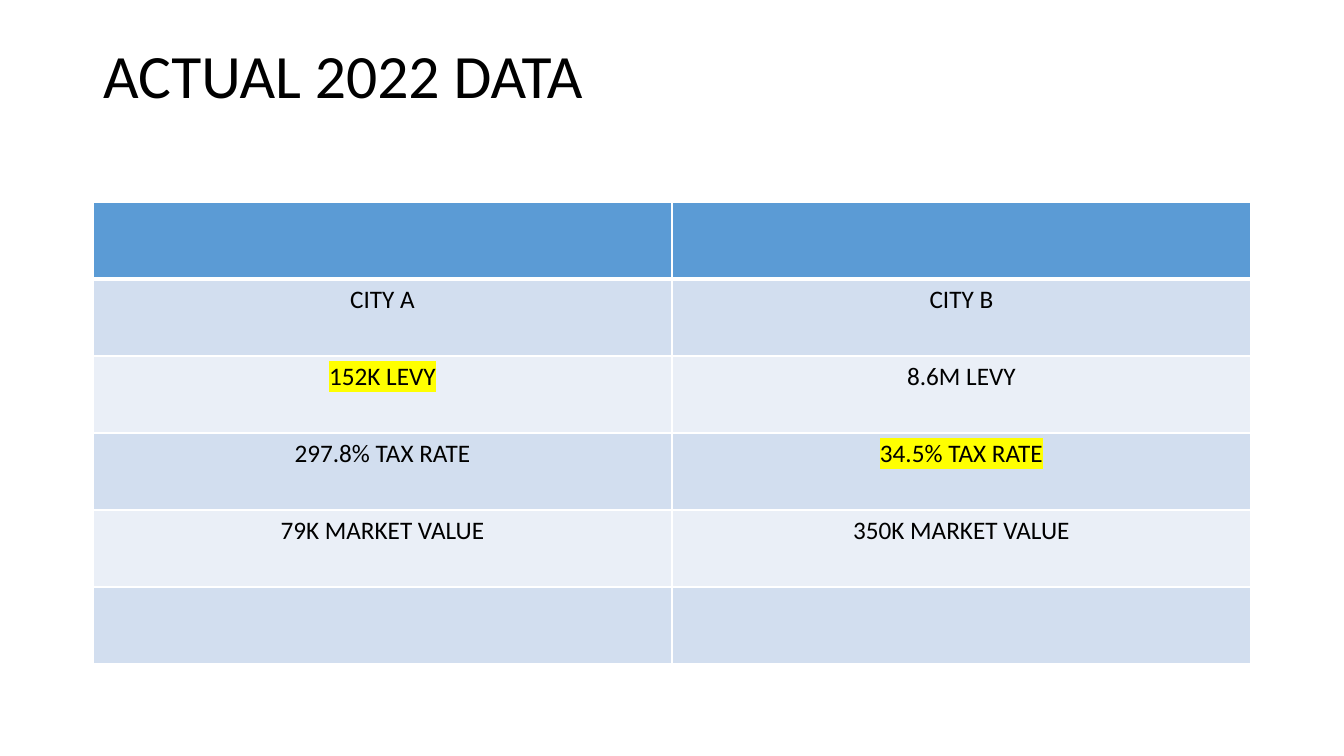
from lxml.etree import SubElement
from pptx import Presentation
from pptx.dml.color import RGBColor
from pptx.enum.text import MSO_ANCHOR, PP_ALIGN
from pptx.oxml import parse_xml
from pptx.oxml.ns import nsdecls, qn
from pptx.util import Emu, Pt


def px(n):
    """Turn pixels, 100.8 to the inch, into EMU."""
    return Emu(round(n * 914400 / 100.8))


def style(run, size):
    run.font.name = "Calibri"
    run.font.size = Pt(size)
    run.font.color.rgb = RGBColor.from_string("000000")


deck = Presentation()
deck.slide_width, deck.slide_height = px(1344), px(756)
slide = deck.slides.add_slide(deck.slide_layouts[5])

title = slide.shapes.title
title.left, title.top, title.width, title.height = px(93), px(40), px(1158), px(146)
frame = title.text_frame
frame.word_wrap = True
frame.vertical_anchor = MSO_ANCHOR.TOP
para = frame.paragraphs[0]
para.alignment = PP_ALIGN.LEFT
para.line_spacing = 0.9
run = para.add_run()
run.text = "ACTUAL 2022 DATA"
style(run, 44)

rows = [
    ("", ""),
    ("CITY A", "CITY B"),
    ("152K LEVY", "8.6M LEVY"),
    ("297.8% TAX RATE", "34.5% TAX RATE"),
    ("79K MARKET VALUE", "350K MARKET VALUE"),
    ("", ""),
]
marked = {"152K LEVY", "34.5% TAX RATE"}

table = slide.shapes.add_table(
    len(rows), 2, px(93), px(202), px(2 * 579), px(len(rows) * 77)).table
for col in table.columns:
    col.width = px(579)

for i, row in enumerate(rows):
    table.rows[i].height = px(77)
    fill = "5B9BD5" if i == 0 else "D2DEEF" if i % 2 else "EAEFF7"
    for j, text in enumerate(row):
        cell = table.cell(i, j)
        props = cell._tc.get_or_add_tcPr()
        for side in ("lnL", "lnR", "lnT", "lnB"):
            thick = (i, side) in {(0, "lnB"), (1, "lnT")}
            props.append(parse_xml(
                f'<a:{side} {nsdecls("a")} w="{Pt(3 if thick else 1)}"><a:solidFill>'
                f'<a:srgbClr val="FFFFFF"/></a:solidFill></a:{side}>'))
        cell.fill.solid()
        cell.fill.fore_color.rgb = RGBColor.from_string(fill)
        para = cell.text_frame.paragraphs[0]
        para.alignment = PP_ALIGN.CENTER
        if not text:
            continue
        run = para.add_run()
        run.text = text
        style(run, 18)
        if text in marked:
            font = run._r.get_or_add_rPr()
            mark = SubElement(font, qn("a:highlight"))
            SubElement(mark, qn("a:srgbClr"), val="FFFF00")
            font.find(qn("a:solidFill")).addnext(mark)

deck.save("out.pptx")
